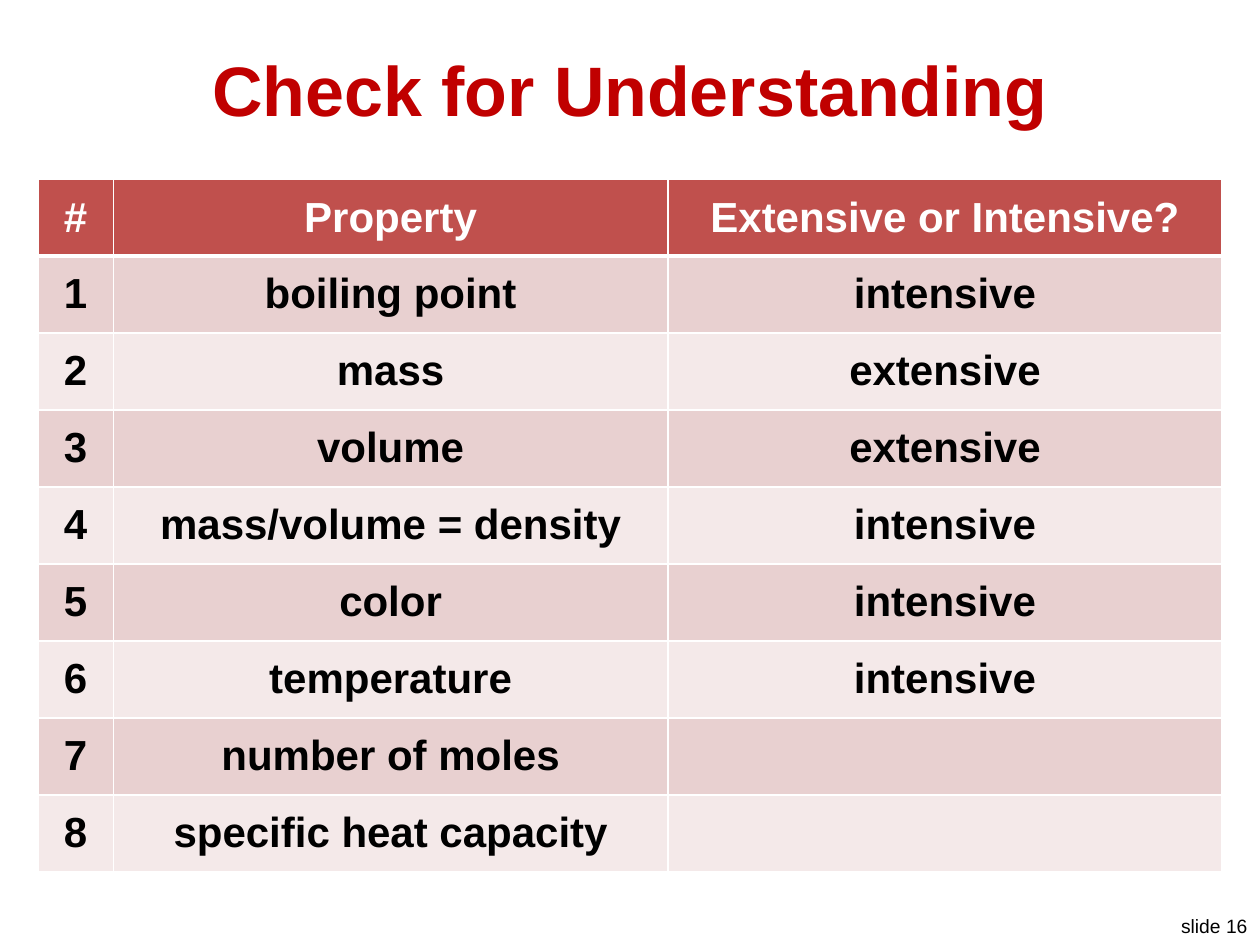
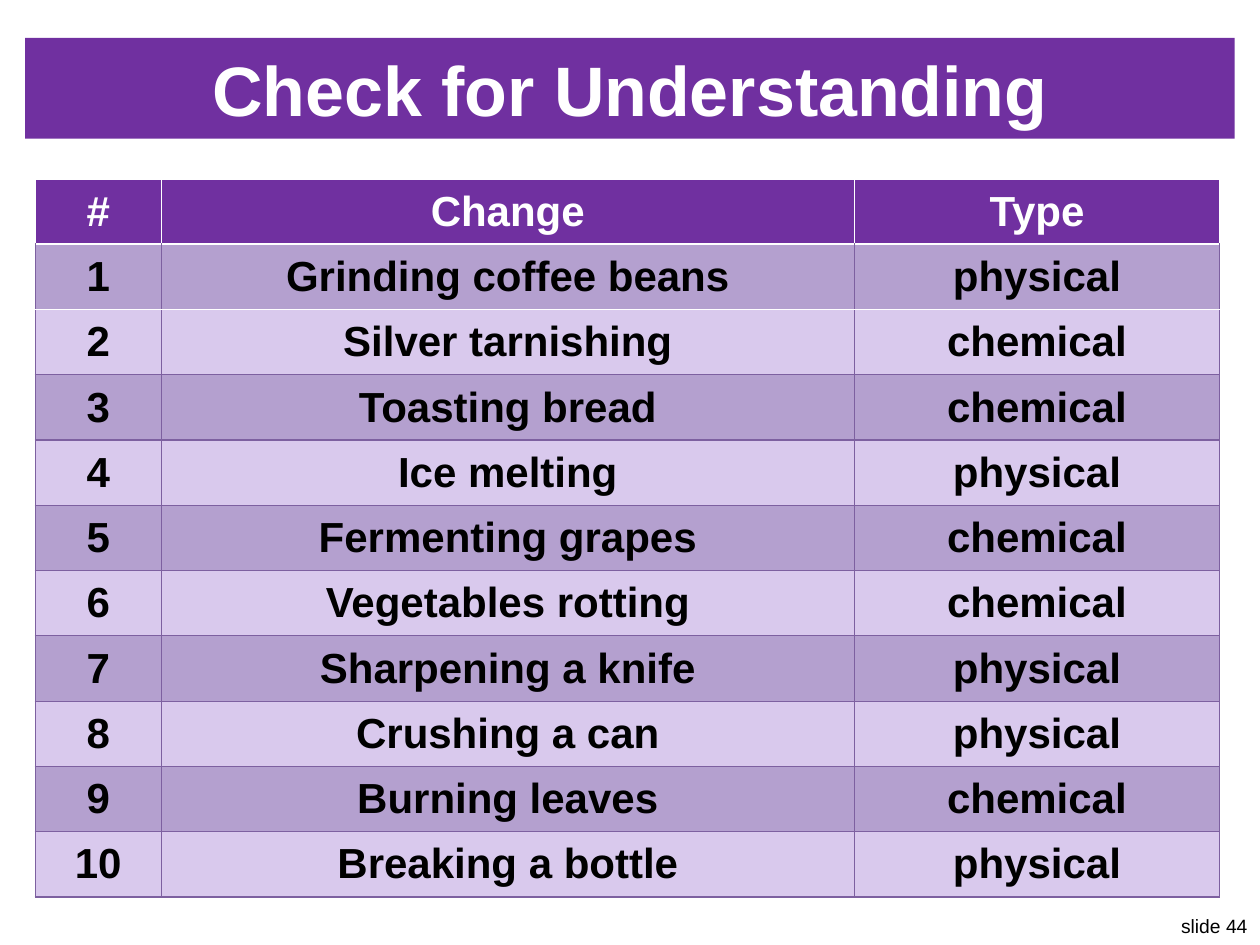
from lxml.etree import SubElement
from pptx import Presentation
from pptx.dml.color import RGBColor
from pptx.enum.shapes import MSO_SHAPE
from pptx.enum.text import MSO_ANCHOR, PP_ALIGN
from pptx.oxml.ns import qn
from pptx.util import Pt

FONT = "Arial"
WHITE, BLACK, RED, PURPLE, VIOLET = "FFFFFF", "000000", "C00000", "7030A0", "7D60A0"
TITLE = "Check for Understanding"
TITLE_BOX = (14.4, 21.6, 691.2, 57.6)
FOOTER_BOX = (666, 519.12, 54, 20.88)
TABLE_TOP, TABLE_WIDTH = 102.24, 676.8

SLIDES = [
    dict(
        number=16, title_color=RED, band=None,
        left=21.6, height=396, columns=(43.2, 316.8, 316.8),
        header_fill="C0504D", stripes=("E8D0D0", "F4E9E9"),
        header_line=(WHITE, 1), body_line=(WHITE, 1), rules={1: (WHITE, 3)},
        header=("#", "Property", "Extensive or Intensive?"),
        rows=[
            ("boiling point", "intensive"),
            ("mass", "extensive"),
            ("volume", "extensive"),
            ("mass/volume = density", "intensive"),
            ("color", "intensive"),
            ("temperature", "intensive"),
            ("number of moles", ""),
            ("specific heat capacity", ""),
        ],
    ),
    dict(
        number=44, title_color=WHITE, band=PURPLE,
        left=20.16, height=410.4, columns=(72, 396, 208.8),
        header_fill=PURPLE, stripes=("B4A0CF", "D9C9ED"),
        header_line=(WHITE, 1), body_line=(VIOLET, 0.75),
        rules={0: (WHITE, 1), 1: (WHITE, 1), 2: (WHITE, 1)},
        header=("#", "Change", "Type"),
        rows=[
            ("Grinding coffee beans", "physical"),
            ("Silver tarnishing", "chemical"),
            ("Toasting bread", "chemical"),
            ("Ice melting", "physical"),
            ("Fermenting grapes", "chemical"),
            ("Vegetables rotting", "chemical"),
            ("Sharpening a knife", "physical"),
            ("Crushing a can", "physical"),
            ("Burning leaves", "chemical"),
            ("Breaking a bottle", "physical"),
        ],
    ),
]


def rgb(color):
    return RGBColor.from_string(color)


def box(values):
    return [Pt(v) for v in values]


def write(tf, text, size=24, color=BLACK, bold=True, align=PP_ALIGN.CENTER):
    p = tf.paragraphs[0]
    p.alignment = align
    if not text:
        p.font.size = Pt(size)
        return
    r = p.add_run()
    r.text = text
    r.font.name = FONT
    r.font.size = Pt(size)
    r.font.bold = bold
    r.font.color.rgb = rgb(color)


def add_title(s, color, band):
    sp = s.shapes.add_shape(MSO_SHAPE.RECTANGLE, *box(TITLE_BOX))
    sp.shadow.inherit = False
    sp.line.fill.background()
    if band:
        sp.fill.solid()
        sp.fill.fore_color.rgb = rgb(band)
    else:
        sp.fill.background()
    tf = sp.text_frame
    tf.word_wrap = True
    tf.vertical_anchor = MSO_ANCHOR.MIDDLE
    write(tf, TITLE, size=40, color=color)


def add_footer(s, number):
    tf = s.shapes.add_textbox(*box(FOOTER_BOX)).text_frame
    tf.word_wrap = False
    write(tf, f"slide {number}", size=11, bold=False, align=PP_ALIGN.RIGHT)


def set_borders(cell, **lines):
    tcPr = cell._tc.get_or_add_tcPr()
    for side, (color, width) in lines.items():
        ln = SubElement(tcPr, qn(f"a:ln{side}"), w=str(Pt(width)))
        fill = SubElement(ln, qn("a:solidFill"))
        SubElement(fill, qn("a:srgbClr"), val=color)


def add_property_table(s, d):
    rows = [d["header"]] + [(str(n), *row) for n, row in enumerate(d["rows"], 1)]
    frame = s.shapes.add_table(len(rows), len(d["columns"]),
                               *box((d["left"], TABLE_TOP, TABLE_WIDTH, d["height"])))
    table = frame.table
    for column, width in zip(table.columns, d["columns"]):
        column.width = Pt(width)
    for i, row in enumerate(rows):
        table.rows[i].height = Pt(d["height"] / len(rows))
        fill = d["stripes"][(i - 1) % 2] if i else d["header_fill"]
        side = d["body_line"] if i else d["header_line"]
        top, bottom = (d["rules"].get(k, d["body_line"]) for k in (i, i + 1))
        for j, text in enumerate(row):
            cell = table.cell(i, j)
            cell.vertical_anchor = MSO_ANCHOR.MIDDLE
            set_borders(cell, L=side, R=side, T=top, B=bottom)
            cell.fill.solid()
            cell.fill.fore_color.rgb = rgb(fill)
            write(cell.text_frame, text, color=BLACK if i else WHITE)


def main():
    prs = Presentation()
    prs.slide_width, prs.slide_height = Pt(720), Pt(540)
    for d in SLIDES:
        s = prs.slides.add_slide(prs.slide_layouts[6])
        add_footer(s, d["number"])
        add_title(s, d["title_color"], d["band"])
        add_property_table(s, d)
    prs.save("out.pptx")


if __name__ == "__main__":
    main()
